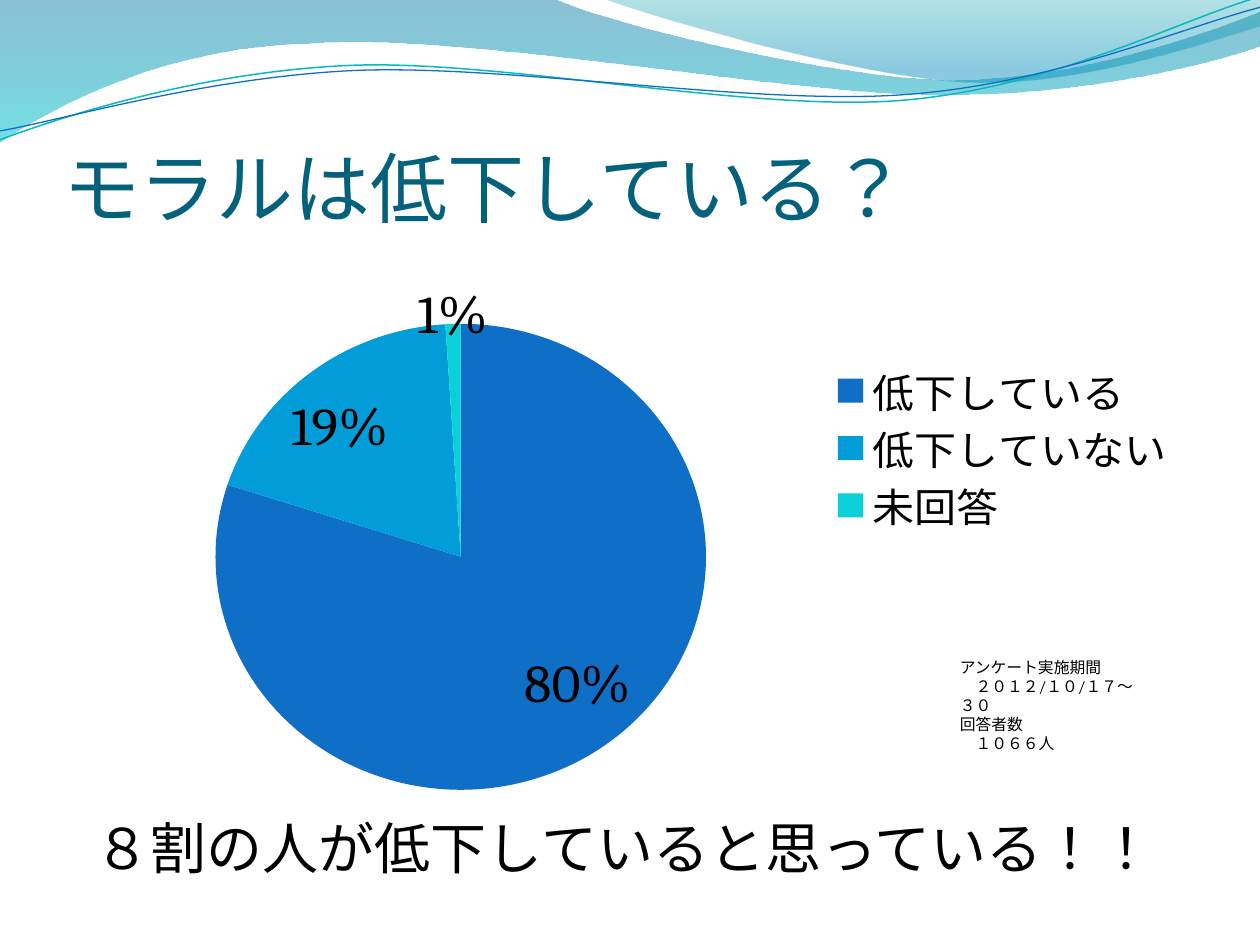
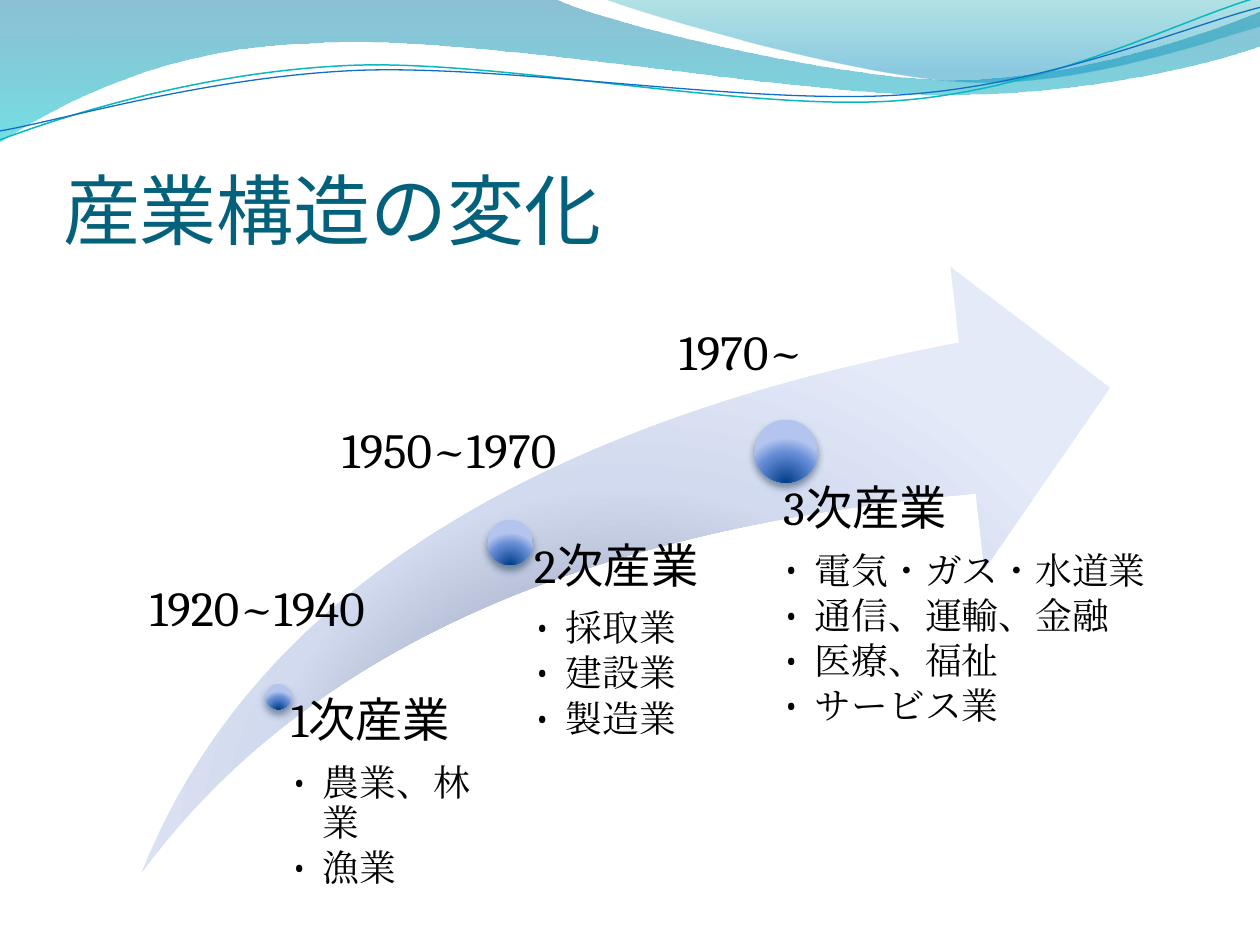
"""Build two slides on falling morals and the changing structure of industry."""
import pptx
import pptx.chart.data
import pptx.dml.color
import pptx.enum.chart
import pptx.enum.lang
import pptx.enum.shapes
import pptx.enum.text
import pptx.oxml
import pptx.oxml.ns
import pptx.util

Cm, Pt = pptx.util.Cm, pptx.util.Pt
qn = pptx.oxml.ns.qn
SHAPE = pptx.enum.shapes.MSO_SHAPE
ALIGN = pptx.enum.text.PP_ALIGN

COLORS = {
    "title": "04617B", "text": "000000",
    "blue": "0F6FC6", "sky": "009DD9", "cyan": "0BD0D9", "teal": "0AB8BF",
    "shadow": "042747",
}
HEAD_FONT, BODY_FONT = "Calibri", "Cambria"

LINEAR = '<a:lin ang="5400000" scaled="1"/>'
RADIAL = ('<a:path path="circle"><a:fillToRect l="50000" t="130000" '
          'r="50000" b="-30000"/></a:path>')
ARROW_STOPS = [(0, "64708D", 100), (68, "D2DAEF", 100), (100, "E4EAF8", 100)]
DOT_STOPS = [(0, "003D87", 100), (68, "668DD7", 100), (100, "B3C4EF", 100)]

BANDS = [
    ([(0, "0074A1", 45), (100, "00C6CF", 55)], (0, 0), [
        [(11.18, -0.03)],
        [(12.09, 0.43), (16.87, 1.6), (19.25, 1.6)],
        [(21.67, 1.6), (24.33, 0.66), (25.4, 0.23)],
        [(25.43, 0.91)],
        [(24.97, 1.12), (22.1, 1.93), (18.95, 1.91)],
        [(15.8, 1.91), (9.7, 0.71), (6.53, 0.86)],
        [(3.28, 0.91), (1.17, 2.11), (-0.03, 2.87)],
        [(0, 0)]]),
    ([(0, "00A1A9", 30), (80, "008BBF", 45)], (12.17, -0.03), [
        [(12.93, 0.28), (17.32, 1.57), (19.53, 1.65)],
        [(21.74, 1.75), (24.41, 0.81), (25.4, 0.53)],
        [(25.4, 0)],
        [(12.17, -0.03)]]),
]
WAVES = [
    ("teal", 0.85, (0, 2.82), [
        [(1.22, 2.36), (4.01, 1.45), (7.04, 1.32)],
        [(10.03, 1.19), (15.06, 2.26), (18.11, 2.03)],
        [(21.16, 1.8), (23.83, 0.38), (25.35, -0.05)]]),
    ("blue", 0.75, (0, 2.64), [
        [(1.19, 2.44), (4.17, 1.55), (7.19, 1.42)],
        [(10.24, 1.3), (15.16, 2.13), (18.21, 1.91)],
        [(21.23, 1.7), (23.9, 0.53), (25.4, 0.15)]]),
]

SURVEY = [("低下している", 0.8, "blue"), ("低下していない", 0.19, "sky"),
          ("未回答", 0.01, "cyan")]
CHART_BOX = (1.3, 5.13, 22.86, 12.19)
PIE_BOX = (3.04, 0.83, 9.9, 9.89)
LEGEND_BOX = (15.36, 1.64, 7.09, 3.65)
SURVEY_NOTE = ["アンケート実施期間", "　２０１２/１０/１７～３０", "回答者数", "　１０６６人"]
CONCLUSION = "８割の人が低下していると思っている！！"

STAGES = [
    {"years": "1920~1940", "years_at": (2.77, 11.51, 4.95, 1.45),
     "dot": (5.36, 13.79, 0.51), "box": (5.59, 14.05, 4.55, 3.53), "inset": 0.28,
     "name": "1次産業", "items": ["農業、林業", "漁業"]},
    {"years": "1950~1970", "years_at": (6.65, 8.33, 5.26, 1.45),
     "dot": (9.83, 10.48, 0.91), "box": (10.29, 10.93, 4.67, 6.63), "inset": 0.48,
     "name": "2次産業", "items": ["採取業", "建設業", "製造業"]},
    {"years": "1970~", "years_at": (13.44, 6.35, 5.26, 1.45),
     "dot": (15.21, 8.46, 1.27), "box": (15.13, 9.77, 8.66, 6.76), "inset": 0.66,
     "name": "3次産業",
     "items": ["電気・ガス・水道業", "通信、運輸、金融", "医療、福祉", "サービス業"]},
]


def rgb(name):
    return pptx.dml.color.RGBColor.from_string(COLORS[name])


def place(box):
    return [Cm(v) for v in box]


def xml(tag, inner="", attrs=""):
    ns = pptx.oxml.ns.nsdecls("a", "c")
    return pptx.oxml.parse_xml(f"<{tag} {ns} {attrs}>{inner}</{tag}>")


def set_font(font, size, name=BODY_FONT, color="text"):
    font.size, font.name, font.color.rgb = Pt(size), name, rgb(color)


def set_japanese(tf):
    for p in tf.paragraphs:
        for r in p.runs:
            r.font.language_id = pptx.enum.lang.MSO_LANGUAGE_ID.JAPANESE


def set_gradient(sp, stops, direction):
    sp.fill.gradient()
    old = sp._element.spPr.find(qn("a:gradFill"))
    gs = "".join(
        f'<a:gs pos="{pos * 1000}"><a:srgbClr val="{color}">'
        f'<a:alpha val="{alpha * 1000}"/></a:srgbClr></a:gs>'
        for pos, color, alpha in stops)
    old.getparent().replace(old, xml("a:gradFill", f"<a:gsLst>{gs}</a:gsLst>{direction}",
                                     'rotWithShape="1"'))
    sp.line.fill.background()
    sp.shadow.inherit = False


def add_curve(s, start, segments, close):
    """Draw one-point segments as straight lines and three-point ones as Bezier curves."""
    builder = s.shapes.build_freeform(*place(start))
    builder.add_line_segments([tuple(place(pt)) for seg in segments for pt in seg], close=close)
    sp = builder.convert_to_shape()
    sp.shadow.inherit = False
    lines = iter(list(sp._element.iter(qn("a:lnTo"))))
    for seg in segments:
        parts = [next(lines) for _ in seg]
        if len(parts) == 3:
            curve = xml("a:cubicBezTo")
            parts[0].addprevious(curve)
            for part in parts:
                curve.append(part[0])
                part.getparent().remove(part)
    return sp


def add_header(s):
    """Draw the wave header and hand it to the master that all slides share."""
    parts = []
    for stops, start, segments in BANDS:
        sp = add_curve(s, start, segments, True)
        set_gradient(sp, stops, LINEAR)
        parts.append(sp)
    for color, width, start, segments in WAVES:
        sp = add_curve(s, start, segments, False)
        sp.fill.background()
        sp.line.color.rgb, sp.line.width = rgb(color), Pt(width)
        parts.append(sp)
    tree = s.slide_layout.slide_master.shapes._spTree
    for i, sp in enumerate(parts):
        tree.insert(2 + i, sp._element)


def add_slide(prs, title, box):
    s = prs.slides.add_slide(prs.slide_layouts[5])
    sp = s.shapes.title
    sp.left, sp.top, sp.width, sp.height = place(box)
    tf = sp.text_frame
    tf.text = title
    tf.vertical_anchor = pptx.enum.text.MSO_ANCHOR.BOTTOM
    tf.margin_left = tf.margin_right = tf.margin_bottom = 0
    p = tf.paragraphs[0]
    p.alignment = ALIGN.LEFT
    set_font(p.font, 44, HEAD_FONT, "title")
    set_japanese(tf)
    return s


def add_text(s, box, lines, size, align=ALIGN.LEFT):
    tf = s.shapes.add_textbox(*place(box)).text_frame
    tf.word_wrap = True
    tf.text = "\n".join(lines)
    for p in tf.paragraphs:
        p.alignment = align
        set_font(p.font, size)
    set_japanese(tf)
    return tf


def set_layout(parent, index, box, target=""):
    for old in parent.findall(qn("c:layout")):
        parent.remove(old)
    shares = [v / CHART_BOX[2 + i % 2] for i, v in enumerate(box)]
    values = '<c:xMode val="edge"/><c:yMode val="edge"/>' + "".join(
        f'<c:{k} val="{v:.4f}"/>' for k, v in zip("xywh", shares))
    parent.insert(index, xml("c:layout", f"<c:manualLayout>{target}{values}</c:manualLayout>"))


def add_pie(s):
    data = pptx.chart.data.CategoryChartData(number_format="0%")
    data.categories = [name for name, _, _ in SURVEY]
    data.add_series("Series 1", [value for _, value, _ in SURVEY])
    chart = s.shapes.add_chart(pptx.enum.chart.XL_CHART_TYPE.PIE,
                               *place(CHART_BOX), data).chart
    set_font(chart.font, 10)
    chart.has_title = False
    chart.has_legend = True
    chart.legend.position = pptx.enum.chart.XL_LEGEND_POSITION.RIGHT
    chart.legend.include_in_layout = False
    set_font(chart.legend.font, 24)
    plot = chart.plots[0]
    plot.vary_by_categories = True
    for i, (_, _, color) in enumerate(SURVEY):
        fill = plot.series[0].points[i].format.fill
        fill.solid()
        fill.fore_color.rgb = rgb(color)
    plot.has_data_labels = True
    labels = plot.data_labels
    labels.show_value, labels.show_percentage = True, False
    labels.number_format, labels.number_format_is_linked = "0%", False
    labels.position = pptx.enum.chart.XL_LABEL_POSITION.BEST_FIT
    set_font(labels.font, 32)
    area = chart._chartSpace.chart.plotArea
    set_layout(area, 0, PIE_BOX, '<c:layoutTarget val="inner"/>')
    set_layout(chart.legend._element, 1, LEGEND_BOX)


def add_dot(s, x, y, size):
    sp = s.shapes.add_shape(SHAPE.OVAL, *place((x, y, size, size)))
    set_gradient(sp, DOT_STOPS, RADIAL)
    sp._element.spPr.find(qn("a:effectLst")).append(xml(
        "a:outerShdw",
        f'<a:srgbClr val="{COLORS["shadow"]}"><a:alpha val="48000"/></a:srgbClr>',
        f'blurRad="{Pt(4.5)}" dist="{Pt(3)}" dir="5400000" rotWithShape="0"'))


def add_stage(s, stage):
    add_dot(s, *stage["dot"])
    tf = add_text(s, stage["box"], [stage["name"], *stage["items"]], 21)
    tf.margin_left = Cm(stage["inset"])
    tf.margin_top = tf.margin_right = tf.margin_bottom = 0
    head, *items = tf.paragraphs
    head.font.size, head.space_after, head.line_spacing = Pt(27), Pt(9.5), 0.9
    for p in items:
        p.level, p.space_after, p.line_spacing = 1, Pt(3.2), 0.9
        pPr = p._p.get_or_add_pPr()
        pPr.set("marL", str(Cm(0.64)))
        pPr.set("indent", str(-Cm(0.64)))
        face = f'typeface="{BODY_FONT}"'
        for mark in (xml("a:buFont", attrs=face), xml("a:buChar", attrs='char="•"')):
            pPr.insert_element_before(mark, "a:tabLst", "a:defRPr")
        pPr.find(qn("a:defRPr")).append(xml("a:ea", attrs=face))


def main():
    prs = pptx.Presentation()
    prs.slide_width, prs.slide_height = Cm(25.4), Cm(19.05)

    s = add_slide(prs, "モラルは低下している？", (1.27, 1.52, 23.62, 3.18))
    add_header(s)
    add_pie(s)
    add_text(s, (0.79, 16.28, 23.62, 1.63), [CONCLUSION], 32, ALIGN.CENTER)
    add_text(s, (19.1, 13.13, 3.99, 2.18), SURVEY_NOTE, 9)

    s = add_slide(prs, "産業構造の変化", (1.27, 1.96, 22.86, 3.18))
    arrow = s.shapes.add_shape(SHAPE.SWOOSH_ARROW, *place((2.87, 5.38, 19.51, 12.19)))
    arrow.adjustments[0] = arrow.adjustments[1] = 0.25
    set_gradient(arrow, ARROW_STOPS, RADIAL)
    for stage in STAGES:
        add_stage(s, stage)
        add_text(s, stage["years_at"], [stage["years"]], 28)

    prs.save("out.pptx")


if __name__ == "__main__":
    main()
